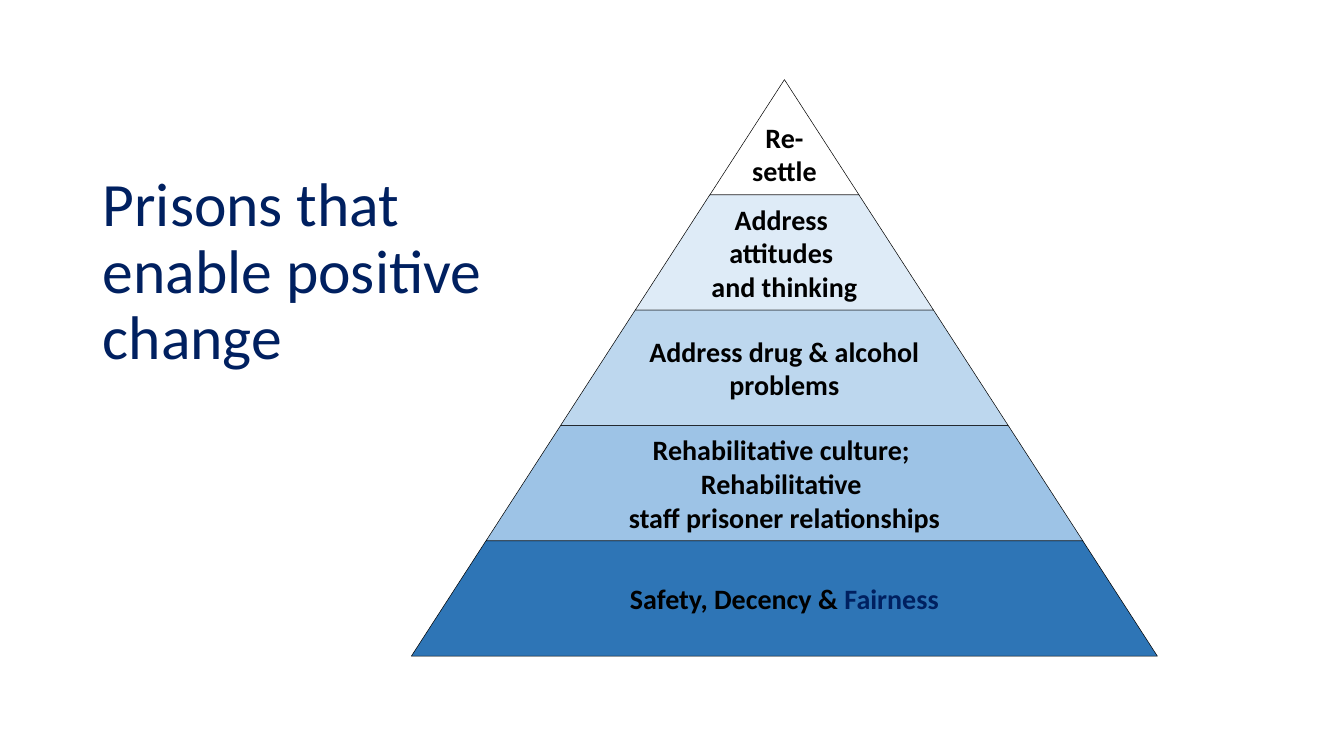
from pptx import Presentation
from pptx.dml.color import RGBColor
from pptx.enum.text import MSO_ANCHOR, PP_ALIGN
from pptx.util import Inches, Pt

TITLE = "Prisons that enable positive change"
NAVY, BLACK = "002060", "000000"
TIERS = [
    ("FFFFFF", 0.33, [["Re-"], ["settle"]]),
    ("DEEBF7", 0, [["Address "], ["attitudes "], ["and thinking"]]),
    ("BDD7EE", 0, [["Address drug & alcohol"], ["problems"]]),
    ("9DC3E6", 0, [["Rehabilitative culture; "], ["Rehabilitative "],
                   ["staff prisoner relationships"]]),
    ("2E75B6", 0, [["Safety, Decency & ", "Fairness"]]),
]
COLORS = {"Fairness": NAVY}
MID, TOP = 7.78, 0.79
HIGH = 5.72 / len(TIERS)
HALF = 0.74


def color(code):
    return RGBColor.from_string(code)


def style(run, size, code, bold=False):
    font = run.font
    font.name = "Calibri"
    font.size = Pt(size)
    font.bold = bold
    font.color.rgb = color(code)


def add_title(slide):
    box = slide.shapes.add_textbox(Inches(0.92), Inches(0.4), Inches(4.42), Inches(4.62))
    frame = box.text_frame
    frame.word_wrap = True
    frame.vertical_anchor = MSO_ANCHOR.MIDDLE
    frame.text = TITLE
    para = frame.paragraphs[0]
    para.line_spacing = 0.9
    style(para.runs[0], 44, NAVY)


def add_tier(slide, row, fill, inset, lines):
    high, low = TOP + row * HIGH, TOP + (row + 1) * HIGH
    near, far = row * HALF, (row + 1) * HALF
    spots = [(MID - far, low), (MID - near, high), (MID + near, high), (MID + far, low)]
    points = [(Inches(x), Inches(y)) for x, y in dict.fromkeys(spots)]
    build = slide.shapes.build_freeform(*points[0])
    build.add_line_segments(points[1:], close=True)
    tier = build.convert_to_shape()
    tier.shadow.inherit = False
    tier.fill.solid()
    tier.fill.fore_color.rgb = color(fill)
    tier.line.color.rgb = color(BLACK)
    tier.line.width = Pt(0.37)
    frame = tier.text_frame
    frame.word_wrap = False
    frame.vertical_anchor = MSO_ANCHOR.MIDDLE
    frame.margin_left = frame.margin_right = frame.margin_bottom = 0
    frame.margin_top = Inches(inset)
    for i, parts in enumerate(lines):
        para = frame.add_paragraph() if i else frame.paragraphs[0]
        para.alignment = PP_ALIGN.CENTER
        for part in parts:
            run = para.add_run()
            run.text = part
            style(run, 20, COLORS.get(part, BLACK), True)


def main():
    deck = Presentation()
    deck.slide_width, deck.slide_height = Inches(13.33), Inches(7.5)
    slide = deck.slides.add_slide(deck.slide_layouts[6])
    add_title(slide)
    for row, tier in enumerate(TIERS):
        add_tier(slide, row, *tier)
    deck.save("out.pptx")


if __name__ == "__main__":
    main()
